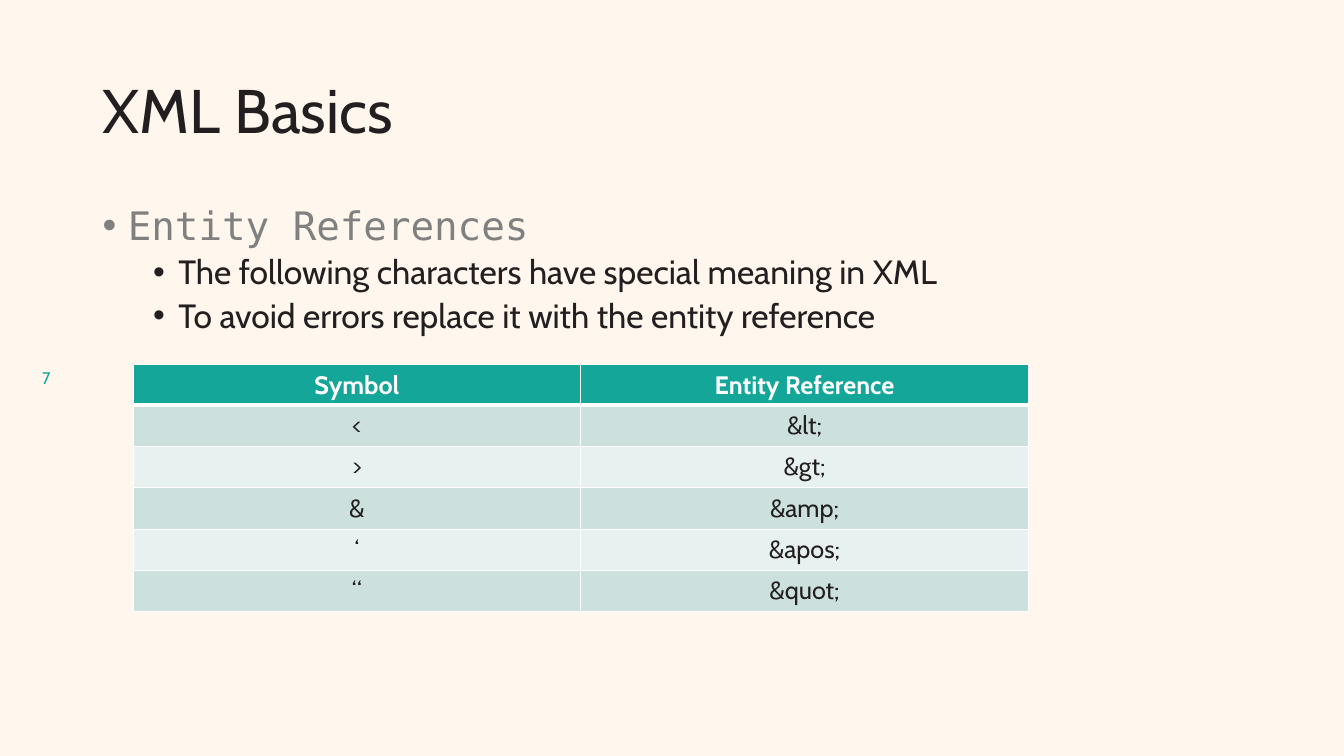
import lxml.etree
import pptx
import pptx.dml.color
import pptx.enum.text
import pptx.oxml.ns
import pptx.util

Inches = pptx.util.Inches
Pt = pptx.util.Pt
RGBColor = pptx.dml.color.RGBColor
ALIGN = pptx.enum.text.PP_ALIGN
ANCHOR = pptx.enum.text.MSO_ANCHOR
qn = pptx.oxml.ns.qn

CREAM = RGBColor(0xFF, 0xF7, 0xED)
TEAL = RGBColor(0x13, 0xA6, 0x99)
INK = RGBColor(0x23, 0x1F, 0x20)
GRAY = RGBColor(0x80, 0x80, 0x80)
WHITE = RGBColor(0xFF, 0xFF, 0xFF)
BAND_DARK = RGBColor(0xCC, 0xE1, 0xDE)
BAND_LIGHT = RGBColor(0xE7, 0xF1, 0xEF)

BULLETS = [
    ("Entity References", 0),
    ("The following characters have special meaning in XML", 1),
    ("To avoid errors replace it with the entity reference", 1),
]
ENTITIES = [
    ("Symbol", "Entity Reference"),
    ("<", "&lt;"),
    (">", "&gt;"),
    ("&", "&amp;"),
    ("‘", "&apos;"),
    ("“", "&quot;"),
]


class SlideBuilder:
    body_font = "Cabin"
    code_font = "DejaVu Sans Mono"

    def __init__(self, deck):
        self.page = deck.slides.add_slide(deck.slide_layouts[5])
        fill = self.page.background.fill
        fill.solid()
        fill.fore_color.rgb = CREAM

    def style(self, para, size, color, align=ALIGN.LEFT, name=body_font, bold=False):
        para.alignment = align
        para.font.name = name
        para.font.size = Pt(size)
        para.font.bold = bold
        para.font.color.rgb = color

    def title(self, text, left, top, width, height):
        box = self.page.shapes.title
        box.left, box.top = Inches(left), Inches(top)
        box.width, box.height = Inches(width), Inches(height)
        frame = box.text_frame
        frame.text = text
        frame.auto_size = pptx.enum.text.MSO_AUTO_SIZE.NONE
        frame.vertical_anchor = ANCHOR.MIDDLE
        para = frame.paragraphs[0]
        para.line_spacing = 0.9
        self.style(para, 44, INK)

    def text_box(self, left, top, width, height, anchor=ANCHOR.TOP):
        box = self.page.shapes.add_textbox(
            Inches(left), Inches(top), Inches(width), Inches(height))
        box.text_frame.word_wrap = True
        box.text_frame.vertical_anchor = anchor
        return box.text_frame

    def page_number(self, number, left, top, width, height):
        para = self.text_box(left, top, width, height, ANCHOR.MIDDLE).paragraphs[0]
        para.text = str(number)
        self.style(para, 12, TEAL, ALIGN.CENTER)

    def bullets(self, items, left, top, width, height):
        frame = self.text_box(left, top, width, height)
        for index, (text, level) in enumerate(items):
            para = frame.add_paragraph() if index else frame.paragraphs[0]
            para.text = text
            para.level = level
            properties = para._p.get_or_add_pPr()
            properties.set("marL", str(Inches(0.25 + 0.5 * level)))
            properties.set("indent", str(Inches(-0.25)))
            lxml.etree.SubElement(properties, qn("a:buFont"), typeface="Arial")
            lxml.etree.SubElement(properties, qn("a:buChar"), char="•")
            para.line_spacing = 0.9
            if index:
                para.space_before = Pt(5)
            if level:
                self.style(para, 24, INK)
            else:
                self.style(para, 28, GRAY, name=self.code_font)

    def border(self, cell, side, width):
        line = lxml.etree.SubElement(
            cell._tc.get_or_add_tcPr(), qn("a:" + side), w=str(Pt(width)))
        fill = lxml.etree.SubElement(line, qn("a:solidFill"))
        lxml.etree.SubElement(fill, qn("a:srgbClr"), val=str(WHITE))

    def table(self, rows, left, top, width, header_height, row_height):
        height = header_height + row_height * (len(rows) - 1)
        table = self.page.shapes.add_table(
            len(rows), len(rows[0]), Inches(left), Inches(top),
            Inches(width), Inches(height)).table
        for row_index, values in enumerate(rows):
            header = row_index == 0
            table.rows[row_index].height = Inches(header_height if header else row_height)
            band = TEAL if header else BAND_DARK if row_index % 2 else BAND_LIGHT
            for column_index, value in enumerate(values):
                cell = table.cell(row_index, column_index)
                for side in ("lnL", "lnR", "lnT", "lnB"):
                    thick = (side == "lnB" and header) or (side == "lnT" and row_index == 1)
                    self.border(cell, side, 3 if thick else 1)
                cell.fill.solid()
                cell.fill.fore_color.rgb = band
                cell.text = value
                self.style(cell.text_frame.paragraphs[0], 18,
                           WHITE if header else INK, ALIGN.CENTER, bold=header)


def main():
    deck = pptx.Presentation()
    deck.slide_width = Inches(13.33)
    deck.slide_height = Inches(7.5)
    slide = SlideBuilder(deck)
    slide.page_number(7, 0, 3.5, 0.92, 0.5)
    slide.title("XML Basics", 0.92, 0.4, 11.5, 1.45)
    slide.bullets(BULLETS, 0.92, 2, 11.5, 4.76)
    slide.table(ENTITIES, 1.32, 3.62, 8.88, 0.4, 0.41)
    deck.save("out.pptx")


if __name__ == "__main__":
    main()
